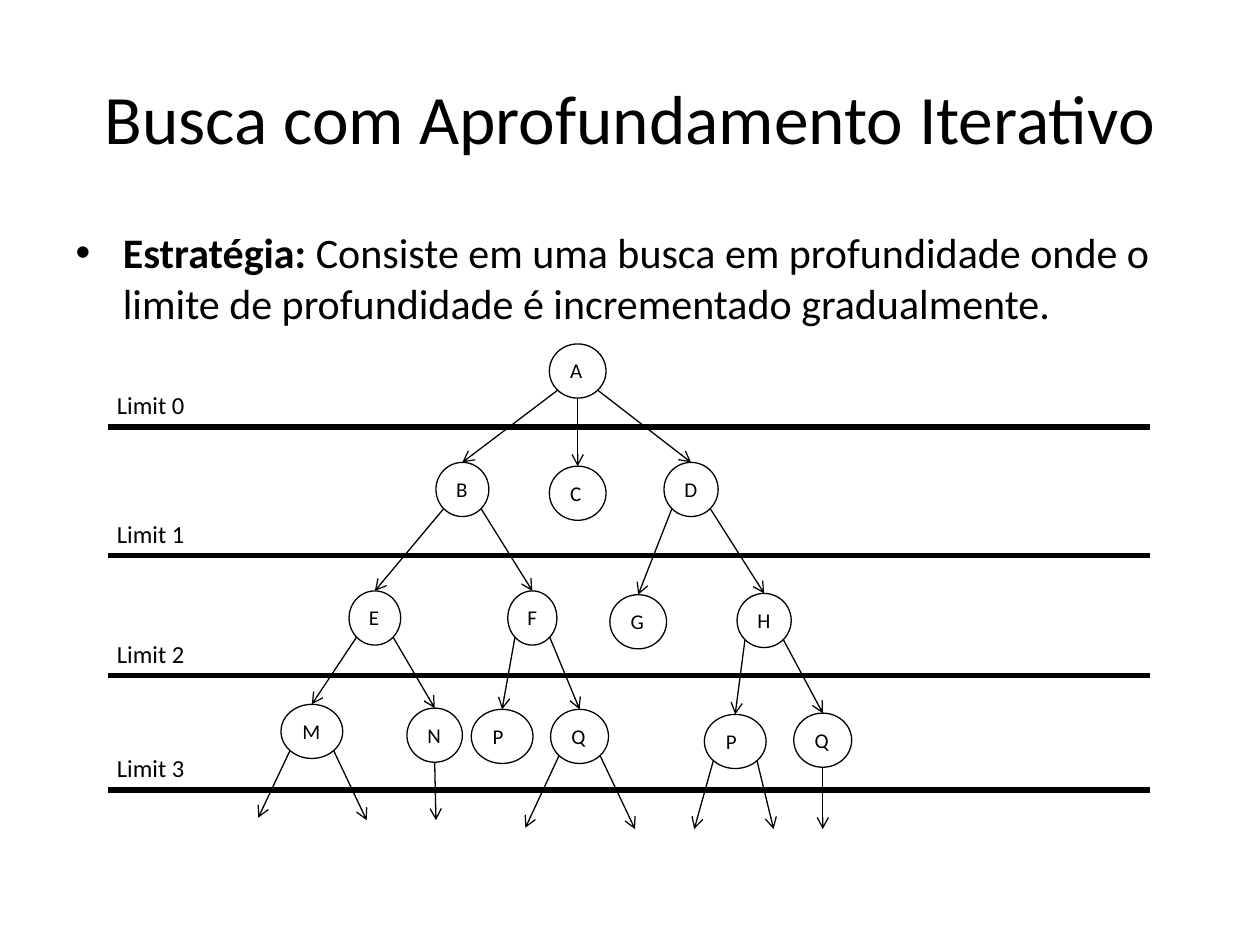
from dataclasses import dataclass
from typing import NamedTuple

import lxml.etree
import pptx
import pptx.dml.color
import pptx.enum.shapes
import pptx.enum.text
import pptx.oxml.ns
import pptx.util


@dataclass(frozen=True)
class Theme:
    ink: pptx.dml.color.RGBColor = pptx.dml.color.RGBColor(0, 0, 0)
    font: str = "Calibri"
    title_size: float = 39.6
    body_size: float = 24
    limit_size: float = 14
    node_size: float = 12
    thin: float = 0.75
    thick: float = 3


class Point(NamedTuple):
    x: float
    y: float


@dataclass(frozen=True)
class Node:
    label: str
    left: float
    top: float
    width: float
    targets: tuple = ()
    wrap: bool = False


@dataclass(frozen=True)
class Limit:
    label: str
    y: float


THEME = Theme()
NODE_HEIGHT = 0.43
LABEL_LEFT, LABEL_WIDTH, LABEL_HEIGHT = 0.83, 0.74, 0.34
RULE_LEFT, RULE_RIGHT = 0.86, 9.13
DIAGONAL = 0.5 ** 0.5

LIMITS = [
    Limit("Limit 0", 3.39),
    Limit("Limit 1", 4.41),
    Limit("Limit 2", 5.36),
    Limit("Limit 3", 6.27),
]

TREE = Node("A", 4.36, 2.73, 0.45, wrap=True, targets=(
    Node("B", 3.46, 3.67, 0.42, (
        Node("E", 2.77, 4.69, 0.41, (
            Node("M", 2.23, 5.59, 0.49, (Point(2.05, 6.49), Point(2.91, 6.51))),
            Node("N", 3.23, 5.62, 0.44, (Point(3.46, 6.51),)),
        )),
        Node("F", 4.03, 4.69, 0.39, (
            Node("P", 3.74, 5.63, 0.49, wrap=True),
            Node("Q", 4.37, 5.63, 0.46, (Point(4.17, 6.57), Point(5.04, 6.58)), True),
        )),
    )),
    Node("C", 4.36, 3.7, 0.45),
    Node("D", 5.27, 3.67, 0.43, (
        Node("G", 4.84, 4.72, 0.45),
        Node("H", 5.85, 4.71, 0.43, (
            Node("P", 5.59, 5.67, 0.49, (Point(5.51, 6.58), Point(6.14, 6.58)), True),
            Node("Q", 6.3, 5.66, 0.46, (Point(6.53, 6.58),), True),
        )),
    )),
))


def place(left: float, top: float, width: float, height: float) -> list:
    return [pptx.util.Inches(length) for length in (left, top, width, height)]


def add_text(para, text: str, *, size: float, bold: bool = False) -> None:
    span = para.add_run()
    span.text = text
    span.font.name = THEME.font
    span.font.size = pptx.util.Pt(size)
    span.font.bold = bold
    span.font.color.rgb = THEME.ink


def fit_to_text(box, wrap: bool) -> None:
    frame = box.text_frame
    frame.word_wrap = wrap
    frame.auto_size = pptx.enum.text.MSO_AUTO_SIZE.SHAPE_TO_FIT_TEXT
    frame.vertical_anchor = pptx.enum.text.MSO_ANCHOR.TOP
    frame.paragraphs[0].alignment = pptx.enum.text.PP_ALIGN.LEFT


def draw_line(page, start: Point, end: Point, weight: float, arrow: bool = False) -> None:
    line = page.shapes.add_connector(
        pptx.enum.shapes.MSO_CONNECTOR.STRAIGHT, *place(*start, *end))
    line.line.color.rgb = THEME.ink
    line.line.width = pptx.util.Pt(weight)
    if arrow:
        lxml.etree.SubElement(
            line.line._get_or_add_ln(), pptx.oxml.ns.qn("a:tailEnd"), type="arrow")
    lxml.etree.SubElement(line._element.spPr, pptx.oxml.ns.qn("a:effectLst"))


def draw_limit(page, limit: Limit) -> None:
    box = page.shapes.add_textbox(
        *place(LABEL_LEFT, limit.y - LABEL_HEIGHT, LABEL_WIDTH, LABEL_HEIGHT))
    fit_to_text(box, wrap=False)
    add_text(box.text_frame.paragraphs[0], limit.label, size=THEME.limit_size)
    draw_line(page, Point(RULE_LEFT, limit.y), Point(RULE_RIGHT, limit.y), THEME.thick)


def exit_point(node: Node, index: int) -> Point:
    count = len(node.targets)
    side = 2 * index / (count - 1) - 1 if count > 1 else 0
    drop = DIAGONAL if side else 1
    return Point(node.left + node.width / 2 * (1 + side * DIAGONAL),
                 node.top + NODE_HEIGHT / 2 * (1 + drop))


def draw_tree(page, node: Node) -> None:
    circle = page.shapes.add_shape(
        pptx.enum.shapes.MSO_SHAPE.OVAL,
        *place(node.left, node.top, node.width, NODE_HEIGHT))
    circle.shadow.inherit = False
    circle.fill.background()
    circle.line.color.rgb = THEME.ink
    circle.line.width = pptx.util.Pt(THEME.thin)
    fit_to_text(circle, node.wrap)
    add_text(circle.text_frame.paragraphs[0], node.label, size=THEME.node_size)
    for index, target in enumerate(node.targets):
        end = target
        if isinstance(target, Node):
            end = Point(target.left + target.width / 2, target.top)
            draw_tree(page, target)
        draw_line(page, exit_point(node, index), end, THEME.thin, arrow=True)


def fill_placeholder(box, bounds: list, anchor):
    box.left, box.top, box.width, box.height = bounds
    box.text_frame.auto_size = pptx.enum.text.MSO_AUTO_SIZE.NONE
    box.text_frame.vertical_anchor = anchor
    return box.text_frame.paragraphs[0]


def main() -> None:
    deck = pptx.Presentation()
    deck.slide_width = pptx.util.Inches(10)
    deck.slide_height = pptx.util.Inches(7.5)
    page = deck.slides.add_slide(deck.slide_layouts[1])

    para = fill_placeholder(page.shapes.title, place(0.5, 0.3, 9, 1.25),
                            pptx.enum.text.MSO_ANCHOR.MIDDLE)
    para.alignment = pptx.enum.text.PP_ALIGN.CENTER
    add_text(para, "Busca com Aprofundamento Iterativo", size=THEME.title_size)

    para = fill_placeholder(page.placeholders[1], place(0.5, 1.75, 9, 4.95),
                            pptx.enum.text.MSO_ANCHOR.TOP)
    para.space_before = pptx.util.Pt(0)
    add_text(para, "Estratégia: ", size=THEME.body_size, bold=True)
    add_text(para, "Consiste em uma busca em profundidade onde o limite de "
             "profundidade é incrementado gradualmente.", size=THEME.body_size)

    for limit in LIMITS:
        draw_limit(page, limit)
    draw_tree(page, TREE)
    deck.save("out.pptx")


if __name__ == "__main__":
    main()
